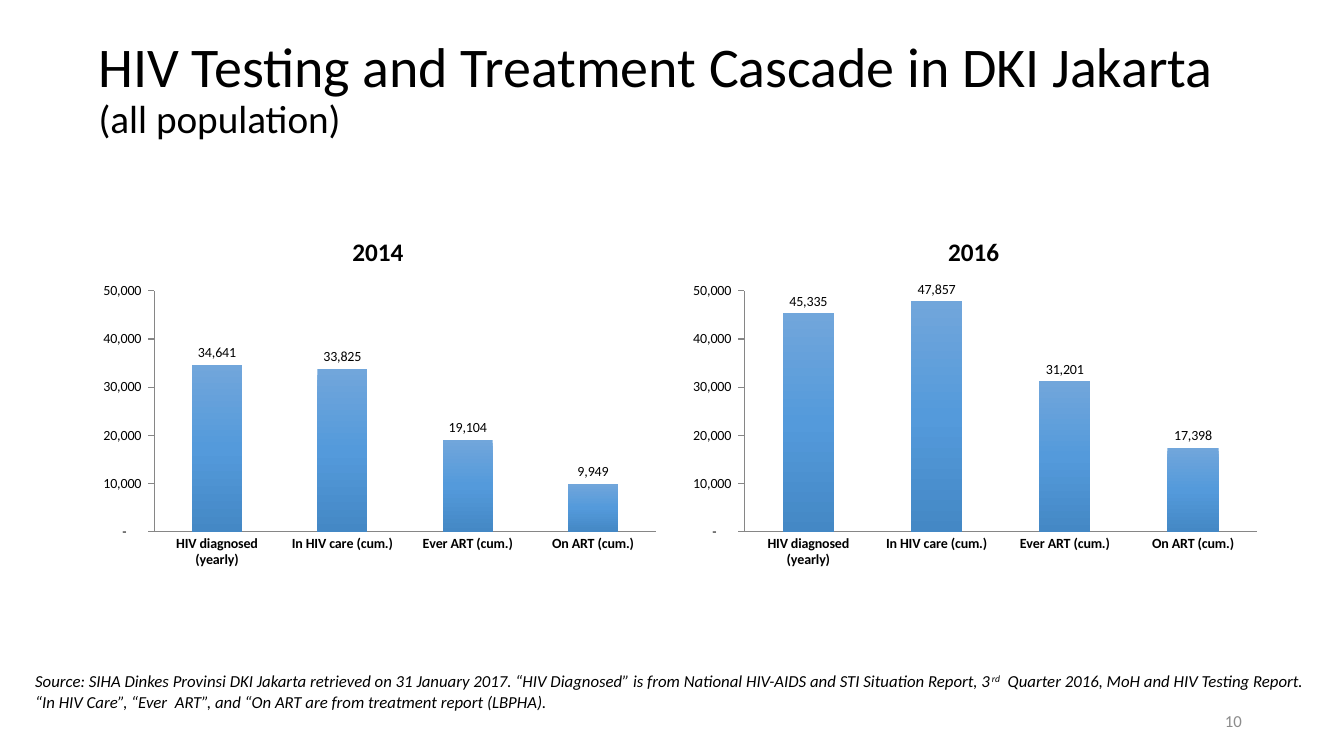
import copy

import pptx
import pptx.chart.data
import pptx.dml.color
import pptx.enum.chart
import pptx.enum.text
import pptx.oxml
import pptx.util

Pt = pptx.util.Pt
NUMBER_FORMAT = '_(* #,##0_);_(* \\(#,##0\\);_(* "-"??_);_('
STAGES = ["HIV diagnosed (yearly)", "In HIV care (cum.)", "Ever ART (cum.)", "On ART (cum.)"]
# Year, left, width, values
CASCADES = [
    ("2014", 63.36, 413.28, (34641, 33825, 19104, 9949)),
    ("2016", 484.56, 421.92, (45335, 47857, 31201, 17398)),
]


def color(hex_value):
    return pptx.dml.color.RGBColor.from_string(hex_value)


class Deck:
    font_name = "Calibri"
    ink = "000000"
    axis_gray = "868686"
    bar_shades = ((0, "71A6DB"), (50, "549ADB"), (100, "4488C5"))

    def __init__(self, width, height):
        self.file = pptx.Presentation()
        self.file.slide_width = Pt(width)
        self.file.slide_height = Pt(height)
        self.slide = self.file.slides.add_slide(self.file.slide_layouts[6])

    def style(self, font, size, shade=None, bold=False, italic=False):
        font.name = self.font_name
        font.size = Pt(size)
        font.bold = bold
        font.italic = italic
        font.color.rgb = color(shade or self.ink)

    def text(self, left, top, width, height, anchor="TOP", align="LEFT"):
        """Add a text box and return its first paragraph."""
        frame = self.slide.shapes.add_textbox(Pt(left), Pt(top), Pt(width), Pt(height)).text_frame
        frame.word_wrap = True
        frame.vertical_anchor = getattr(pptx.enum.text.MSO_ANCHOR, anchor)
        paragraph = frame.paragraphs[0]
        paragraph.alignment = getattr(pptx.enum.text.PP_ALIGN, align)
        return paragraph

    def run(self, paragraph, words):
        run = paragraph.add_run()
        run.text = words
        return run

    def shade_bars(self, series):
        fill = series.format.fill
        fill.gradient()
        fill.gradient_angle = 270
        stop_list = series._element.xpath("c:spPr/a:gradFill/a:gsLst")[0]
        stop_list.append(copy.deepcopy(stop_list[-1]))
        for stop, (percent, shade) in zip(fill.gradient_stops, self.bar_shades):
            stop.position = percent / 100
            stop.color.rgb = color(shade)

    def column_chart(self, year, left, top, width, height, values):
        data = pptx.chart.data.CategoryChartData(number_format=NUMBER_FORMAT)
        data.categories = STAGES
        data.add_series(year, values)
        kind = pptx.enum.chart.XL_CHART_TYPE.COLUMN_CLUSTERED
        chart = self.slide.shapes.add_chart(
            kind, Pt(left), Pt(top), Pt(width), Pt(height), data).chart
        self.style(chart.font, 10)
        chart.has_legend = False
        chart.has_title = True
        heading = chart.chart_title.text_frame
        heading.text = year
        self.style(heading.paragraphs[0].font, 18, bold=True)
        chart.chart_title.include_in_layout = False

        # Axes
        ticks = pptx.enum.chart.XL_TICK_MARK
        stages, people = chart.category_axis, chart.value_axis
        for axis, mark in ((stages, ticks.NONE), (people, ticks.OUTSIDE)):
            axis.has_major_gridlines = False
            axis.major_tick_mark = mark
            axis.minor_tick_mark = ticks.NONE
            axis.format.line.color.rgb = color(self.axis_gray)
            axis.format.line.width = Pt(0.75)
        self.style(stages.tick_labels.font, 10, bold=True)
        people.minimum_scale, people.maximum_scale, people.major_unit = 0, 50000, 10000
        people.tick_labels.number_format = NUMBER_FORMAT
        people.tick_labels.number_format_is_linked = False

        # Columns and their values
        plot = chart.plots[0]
        plot.gap_width = 150
        plot.overlap = -25
        plot.vary_by_categories = False
        plot.has_data_labels = True
        labels = plot.data_labels
        labels.show_value = True
        labels.number_format = NUMBER_FORMAT
        labels.number_format_is_linked = False
        labels.position = pptx.enum.chart.XL_LABEL_POSITION.OUTSIDE_END
        self.style(labels.font, 10)
        self.shade_bars(plot.series[0])


def main():
    deck = Deck(960, 540)

    # Title
    title = deck.text(63.36, 0, 843.12, 128.88, anchor="MIDDLE")
    title.line_spacing = 0.9
    deck.style(title.font, 40)
    deck.run(title, "HIV Testing and Treatment Cascade in DKI Jakarta ")
    title.add_line_break()
    deck.run(title, "(all population)").font.size = Pt(28)

    # Cascade by year
    for year, left, width, values in CASCADES:
        deck.column_chart(year, left, 155.52, width, 254.88, values)

    # Source note
    source = deck.text(18, 475.92, 927.36, 36)
    deck.style(source.font, 12, italic=True)
    deck.run(source, "Source: SIHA Dinkes Provinsi DKI Jakarta retrieved on 31 January 2017. "
                     "“HIV Diagnosed” is from National HIV-AIDS and STI Situation Report, 3")
    ordinal = deck.run(source, "rd")
    ordinal.font._element.set("baseline", "30000")
    deck.run(source, "  Quarter 2016, MoH and HIV Testing Report. "
                     "“In HIV Care”, “Ever  ART”, and “On ART are from treatment report (LBPHA).")

    # Page number
    page = deck.text(678.24, 500.4, 216, 28.8, anchor="MIDDLE", align="RIGHT")
    deck.style(page.font, 12, "8C8C8C")
    deck.run(page, "10")

    deck.file.save("out.pptx")


if __name__ == "__main__":
    main()
